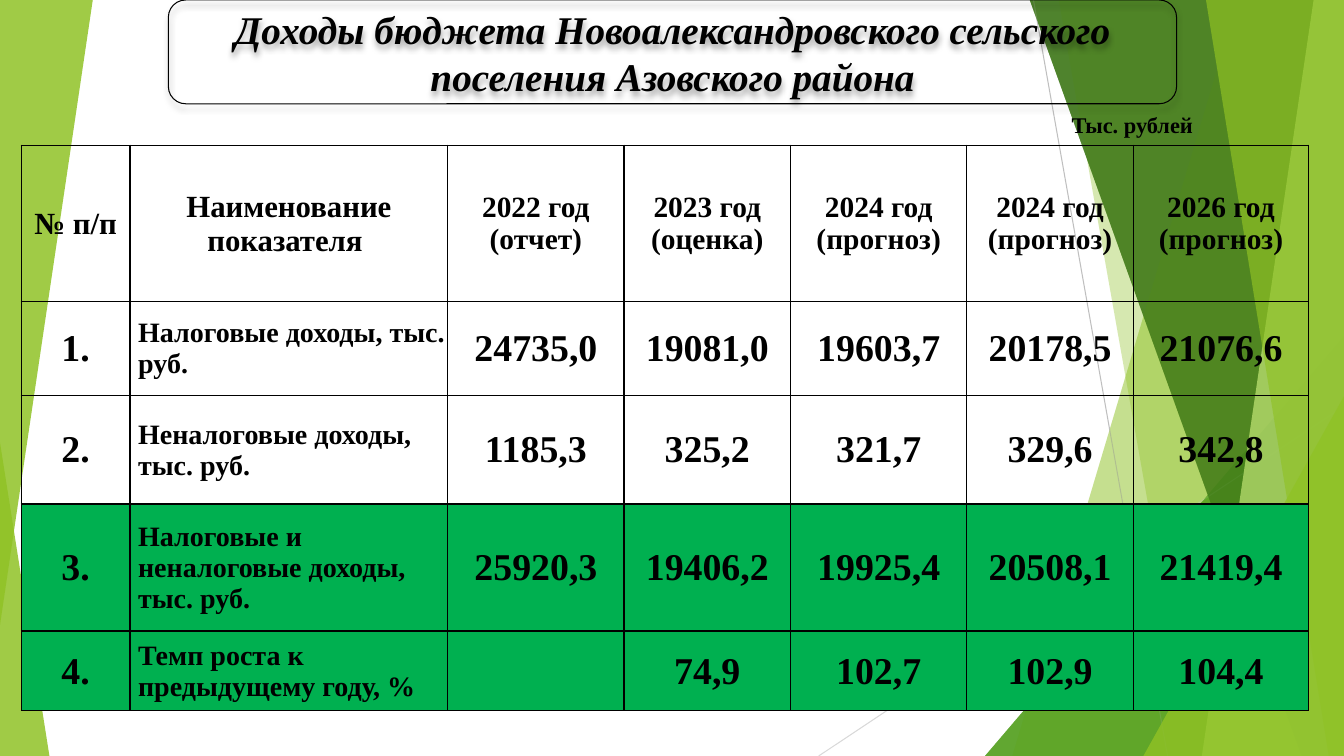
from lxml import etree
from pptx import Presentation, util as u
from pptx.dml.color import RGBColor
from pptx.enum import shapes, text
from pptx.oxml.ns import qn

FONT = "Times New Roman"
COLORS = {"black": "000000", "lime": "90C226", "leaf": "54A021", "forest": "3F7819",
          "pale": "C0E474", "total": "00B050", "line": "BFBFBF", "light line": "D9D9D9"}


def paint(shape, color, alpha):
    """Flat translucent fill without outline or shadow."""
    shape.shadow.inherit = False
    shape.line.fill.background()
    shape.fill.solid()
    shape.fill.fore_color.rgb = RGBColor.from_string(COLORS[color])
    tint = shape._element.spPr.find(".//" + qn("a:srgbClr"))
    etree.SubElement(tint, qn("a:alpha"), val=str(alpha * 1000))


def write(para, words, size, italic=False, align=text.PP_ALIGN.CENTER):
    para.alignment = align
    span = para.add_run()
    span.text = words
    font = span.font
    font.name, font.size, font.bold, font.italic = FONT, u.Pt(size), True, italic
    font.color.rgb = RGBColor.from_string(COLORS["black"])


deck = Presentation()
deck.slide_width, deck.slide_height = u.Inches(13.33), u.Inches(7.5)
page = deck.slides.add_slide(deck.slide_layouts[6])

# Background facets: bands run from the top edge to the bottom edge at the right,
# triangles give left, top, width, height, apex position
TOP, BOTTOM, RIGHT = -0.01, 7.5, 13.33
facets = [
    ("band", (12.28, 10.04), "lime", 30),
    ("band", (10.5, 11.83), "lime", 20),
    ("triangle", (9.77, 3.33, 3.56, 4.17, 1), "leaf", 72),
    ("band", (10.21, 12.91), "forest", 70),
    ("band", (13.03, 11.92), "pale", 70),
    ("band", (11.96, 13.18), "lime", 65),
    ("triangle", (11.34, 3.93, 1.99, 3.57, 1), "lime", 80),
]
lower_left = ("triangle", (0, 4.39, 0.49, 3.11, 0), "lime", 85)
upper_left = ("triangle", (0, 0, 0.92, 6.2, 1), "lime", 85)
rays = [((10.25, 0), (11.58, 7.5), "line"), ((13.33, 4.03), (8.12, 7.5), "light line")]

# The facets are layered twice, with the thin rays between the layers
for layer_rays, left_facet in (([], lower_left), (rays, upper_left)):
    for start, end, color in layer_rays:
        ray = page.shapes.add_connector(shapes.MSO_CONNECTOR.STRAIGHT,
                                        *map(u.Inches, start + end))
        ray.line.color.rgb = RGBColor.from_string(COLORS[color])
        ray.line.width = u.Pt(0.75)
        etree.SubElement(ray._element.spPr, qn("a:effectLst"))
    for kind, place, color, alpha in facets + [left_facet]:
        if kind == "band":
            top_x, bottom_x = place
            corners = [(RIGHT, TOP), (RIGHT, BOTTOM), (bottom_x, BOTTOM)]
            outline = page.shapes.build_freeform(u.Inches(top_x), u.Inches(TOP))
            outline.add_line_segments([(u.Inches(x), u.Inches(y)) for x, y in corners])
            facet = outline.convert_to_shape()
        else:
            facet = page.shapes.add_shape(shapes.MSO_SHAPE.ISOSCELES_TRIANGLE,
                                          *map(u.Inches, place[:4]))
            facet.adjustments[0] = place[4]
        if left_facet is upper_left and place is upper_left[1]:
            facet.rotation = 180
        paint(facet, color, alpha)

# Budget table
headers = ["№ п/п", "Наименование показателя ", "2022 год\n(отчет)", "2023 год (оценка)",
           "2024 год (прогноз)", "2024 год (прогноз)", "2026 год (прогноз)"]
rows = [
    headers,
    ["1.", "Налоговые доходы, тыс. руб.", "24735,0", "19081,0", "19603,7", "20178,5", "21076,6"],
    ["2.", "Неналоговые доходы,\nтыс. руб.", "1185,3", "325,2", "321,7", "329,6", "342,8"],
    ["3.", "Налоговые и неналоговые доходы, тыс. руб.",
     "25920,3", "19406,2", "19925,4", "20508,1", "21419,4"],
    ["4.", "Темп роста к предыдущему году, %", "", "74,9", "102,7", "102,9", "104,4"],
]
widths = [1.08, 3.15, 1.75, 1.65, 1.75, 1.65, 1.74]
heights = [1.55, 0.93, 1.08, 1.26, 0.79]
table = page.shapes.add_table(len(rows), len(widths), u.Inches(0.21), u.Inches(1.44),
                              u.Inches(sum(widths)), u.Inches(sum(heights))).table
table.first_row = table.horz_banding = False
for column, width in zip(table.columns, widths):
    column.width = u.Inches(width)
for row, height in zip(table.rows, heights):
    row.height = u.Inches(height)

for r, row in enumerate(rows):
    for c, words in enumerate(row):
        cell = table.cell(r, c)
        is_label = r > 0 and c == 1
        cell.vertical_anchor = text.MSO_ANCHOR.MIDDLE
        cell.margin_left = u.Inches(0.08 if is_label else 0.01)
        cell.margin_top = cell.margin_right = u.Inches(0.01)
        cell.margin_bottom = 0
        if r == 0:
            size = 22 if c < 2 else 21
        else:
            size = 20 if is_label else 27
        align = text.PP_ALIGN.LEFT if is_label else text.PP_ALIGN.CENTER
        for i, line in enumerate(words.split("\n") if words else []):
            para = cell.text_frame.paragraphs[0] if i == 0 else cell.text_frame.add_paragraph()
            write(para, line, size, align=align)
        # Borders come before the fill in the cell properties
        props = cell._tc.get_or_add_tcPr()
        for side in ("lnL", "lnR", "lnT", "lnB"):
            border = etree.SubElement(props, qn("a:" + side), w=str(u.Pt(1)))
            ink = etree.SubElement(border, qn("a:solidFill"))
            etree.SubElement(ink, qn("a:srgbClr"), val=COLORS["black"])
        if r >= 3:
            cell.fill.solid()
            cell.fill.fore_color.rgb = RGBColor.from_string(COLORS["total"])
        else:
            cell.fill.background()

# Title frame with a soft shadow
title = page.shapes.add_shape(shapes.MSO_SHAPE.ROUNDED_RECTANGLE, u.Inches(1.67), 0,
                              u.Inches(10), u.Inches(1.03))
title.fill.background()
title.line.color.rgb = RGBColor.from_string(COLORS["black"])
title.line.width = u.Pt(0.75)
title.shadow.inherit = False
effects = title._element.spPr.find(qn("a:effectLst"))
shadow = etree.SubElement(effects, qn("a:outerShdw"), blurRad=str(u.Pt(4)), dist=str(u.Pt(3)),
                          dir="5400000", rotWithShape="0")
shade = etree.SubElement(shadow, qn("a:srgbClr"), val=COLORS["black"])
etree.SubElement(shade, qn("a:alpha"), val="35000")
frame = title.text_frame
frame.word_wrap = True
frame.vertical_anchor = text.MSO_ANCHOR.MIDDLE
frame.margin_left = frame.margin_right = frame.margin_top = frame.margin_bottom = 0
write(frame.paragraphs[0],
      "Доходы бюджета Новоалександровского сельского поселения Азовского района",
      28, italic=True)

# Unit of measure
box = page.shapes.add_textbox(u.Inches(10.53), u.Inches(1.05), u.Inches(1.85), u.Inches(0.37))
box.text_frame.word_wrap = True
write(box.text_frame.paragraphs[0], "Тыс. рублей", 16, align=text.PP_ALIGN.LEFT)

deck.save("out.pptx")
